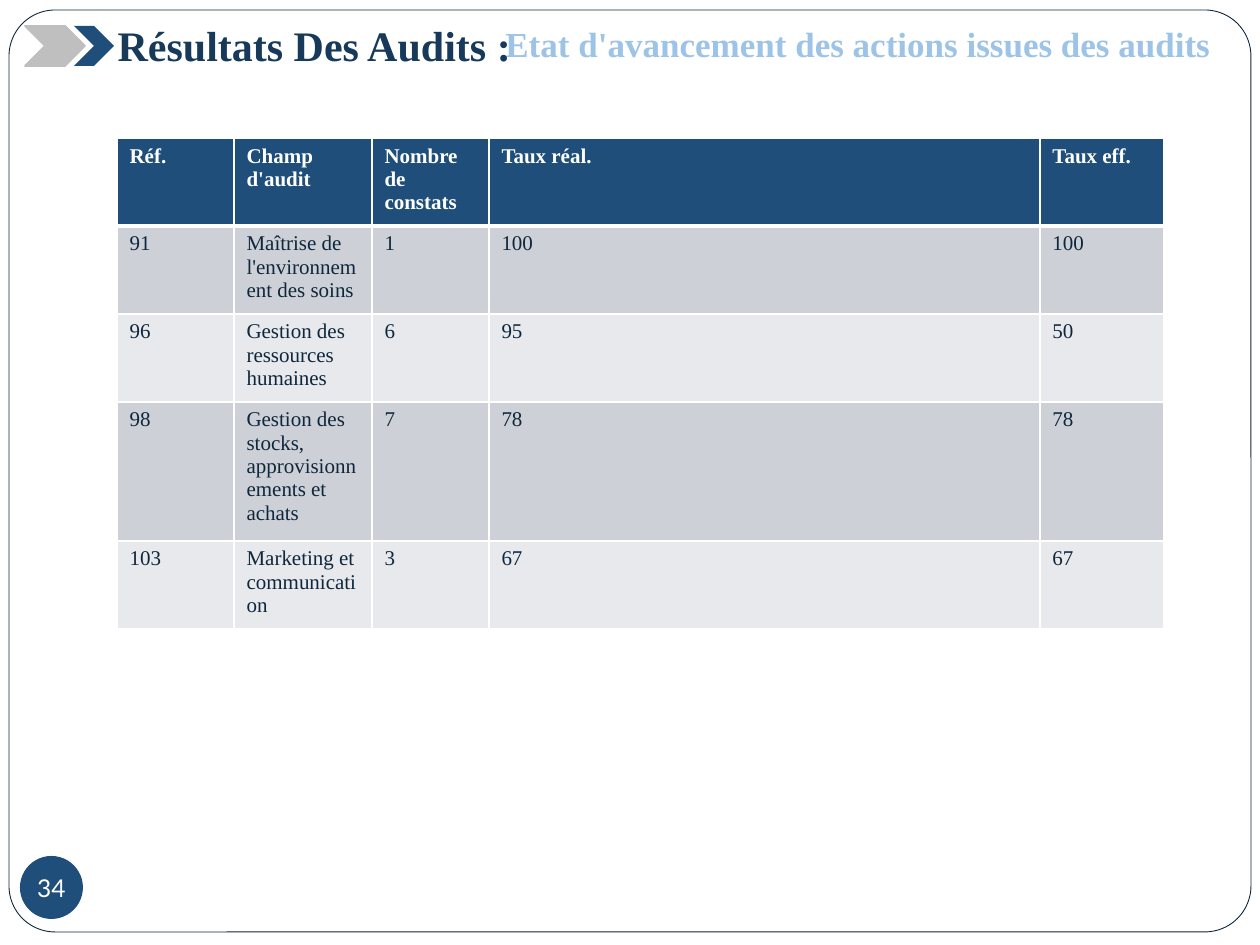
from dataclasses import dataclass

from lxml import etree
from pptx import Presentation
from pptx.dml.color import RGBColor
from pptx.enum.shapes import MSO_SHAPE
from pptx.enum.text import MSO_ANCHOR, MSO_AUTO_SIZE, PP_ALIGN
from pptx.oxml.ns import qn
from pptx.util import Emu, Pt

ROUNDED, CHEVRON, OVAL = MSO_SHAPE.ROUNDED_RECTANGLE, MSO_SHAPE.CHEVRON, MSO_SHAPE.OVAL
LEFT, CENTER = PP_ALIGN.LEFT, PP_ALIGN.CENTER
TOP, MIDDLE = MSO_ANCHOR.TOP, MSO_ANCHOR.MIDDLE
NO_AUTOFIT = MSO_AUTO_SIZE.NONE
EMU_PER_PX = 914400 / 126
TITLE_ONLY_LAYOUT = 5


@dataclass(frozen=True)
class Theme:
    serif: str = "Times New Roman"
    sans: str = "Lato"
    navy: str = "1E4E79"
    title: str = "173A5B"
    subtitle: str = "9DC3E6"
    ink: str = "0F273C"
    grey: str = "BFBFBF"
    white: str = "FFFFFF"
    bands: tuple = ("CDD0D7", "E8E9EC")
    title_size: int = 24
    subtitle_size: int = 20
    number_size: int = 14
    table_size: int = 12


THEME = Theme()

HEADERS = ["Réf.", "Champ d'audit", "Nombre de constats", "Taux réal.", "Taux eff."]
AUDITS = [
    ["91", "Maîtrise de l'environnement des soins", "1", "100", "100"],
    ["96", "Gestion des ressources humaines", "6", "95", "50"],
    ["98", "Gestion des stocks, approvisionnements et achats", "7", "78", "78"],
    ["103", "Marketing et communication", "3", "67", "67"],
]
COLUMN_WIDTHS = [117, 138, 117, 551, 124]
ROW_HEIGHTS = [88, 88, 88, 139, 88]


def px(length):
    return Emu(round(length * EMU_PER_PX))


def color(value):
    return RGBColor.from_string(value)


def set_text(frame, text, size, ink, face=THEME.serif, bold=False, align=LEFT):
    frame.text = text
    paragraph = frame.paragraphs[0]
    paragraph.alignment = align
    font = paragraph.font
    font.name, font.size, font.bold = face, Pt(size), bold
    font.color.rgb = color(ink)


def add_figure(slide, preset, box, fill, line=None, line_width=1):
    figure = slide.shapes.add_shape(preset, *map(px, box))
    figure.shadow.inherit = False
    figure.fill.solid()
    figure.fill.fore_color.rgb = color(fill)
    if line:
        figure.line.color.rgb = color(line)
        figure.line.width = Pt(line_width)
    else:
        figure.line.fill.background()
    return figure


def add_frame(slide):
    frame = add_figure(slide, ROUNDED, (9, 10, 1242, 922), THEME.white, THEME.ink, 0.5)
    frame.adjustments[0] = 0.05


def place_heading(heading, box, text, size, ink, align):
    heading.left, heading.top, heading.width, heading.height = map(px, box)
    frame = heading.text_frame
    frame.auto_size = NO_AUTOFIT
    frame.word_wrap = False
    frame.vertical_anchor = TOP
    set_text(frame, text, size, ink, bold=True, align=align)


def add_headings(slide):
    subtitle = slide.shapes.add_textbox(0, 0, 0, 0)
    place_heading(subtitle, (490, 16, 736, 55),
                  "Etat d'avancement des actions issues des audits",
                  THEME.subtitle_size, THEME.subtitle, CENTER)
    title = slide.shapes.title
    place_heading(title, (105, 13, 420, 63), "Résultats Des Audits :",
                  THEME.title_size, THEME.title, LEFT)
    # The placeholder precedes the frame in the tree, so bring it to the front.
    subtitle.element.addnext(title.element)


def add_page_number(slide, number):
    badge = add_figure(slide, OVAL, (20, 856, 63, 63), THEME.navy)
    frame = badge.text_frame
    frame.margin_left = frame.margin_right = frame.margin_top = frame.margin_bottom = 0
    frame.word_wrap = False
    frame.vertical_anchor = MIDDLE
    set_text(frame, number, THEME.number_size, THEME.white, THEME.sans, align=CENTER)


def set_borders(cell, bottom, top):
    properties = cell._tc.get_or_add_tcPr()
    for side, width in (("L", 1), ("R", 1), ("T", top), ("B", bottom)):
        border = etree.SubElement(properties, qn(f"a:ln{side}"), w=str(Pt(width)))
        fill = etree.SubElement(border, qn("a:solidFill"))
        etree.SubElement(fill, qn("a:srgbClr"), val=THEME.white)


def add_audit_table(slide):
    rows = [HEADERS, *AUDITS]
    table = slide.shapes.add_table(
        len(rows), len(HEADERS), px(117), px(138),
        px(sum(COLUMN_WIDTHS)), px(sum(ROW_HEIGHTS))).table
    for column, width in zip(table.columns, COLUMN_WIDTHS):
        column.width = px(width)
    for index, (row, height, texts) in enumerate(zip(table.rows, ROW_HEIGHTS, rows)):
        row.height = px(height)
        header = index == 0
        fill = THEME.navy if header else THEME.bands[(index - 1) % 2]
        ink = THEME.white if header else THEME.ink
        for cell, text in zip(row.cells, texts):
            set_borders(cell, bottom=3 if header else 1, top=3 if index == 1 else 1)
            cell.fill.solid()
            cell.fill.fore_color.rgb = color(fill)
            set_text(cell.text_frame, text, THEME.table_size, ink, bold=header)


def main():
    deck = Presentation()
    deck.slide_width, deck.slide_height = px(1260), px(945)
    slide = deck.slides.add_slide(deck.slide_layouts[TITLE_ONLY_LAYOUT])
    add_frame(slide)
    add_headings(slide)
    add_figure(slide, CHEVRON, (25, 26, 60, 40), THEME.grey, THEME.grey)
    add_figure(slide, CHEVRON, (74, 26, 40, 40), THEME.navy)
    add_page_number(slide, "34")
    add_audit_table(slide)
    deck.save("out.pptx")


if __name__ == "__main__":
    main()
